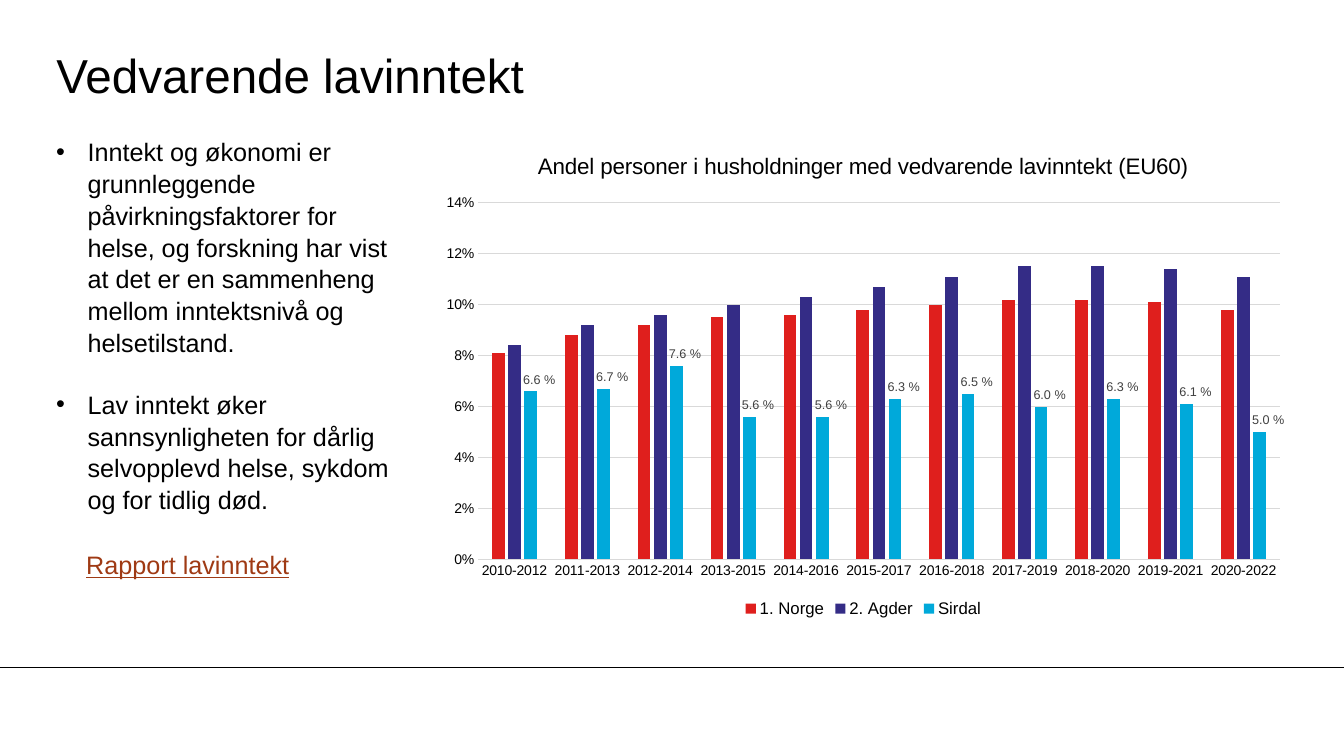
from lxml import etree
from pptx import Presentation
from pptx.chart.data import CategoryChartData
from pptx.dml.color import RGBColor
from pptx.enum.chart import XL_CHART_TYPE, XL_LABEL_POSITION, XL_LEGEND_POSITION, XL_TICK_MARK
from pptx.enum.shapes import MSO_CONNECTOR
from pptx.enum.text import MSO_ANCHOR
from pptx.oxml import parse_xml
from pptx.oxml.ns import nsdecls, qn
from pptx.util import Pt

TITLE = "Vedvarende lavinntekt"
BULLETS = [
    "Inntekt og økonomi er grunnleggende påvirkningsfaktorer for helse, og forskning har vist "
    "at det er en sammenheng mellom inntektsnivå og helsetilstand.",
    "Lav inntekt øker sannsynligheten for dårlig selvopplevd helse, sykdom og for tidlig død.",
]
REPORT = "Rapport lavinntekt"
CHART_TITLE = "Andel personer i husholdninger med vedvarende lavinntekt (EU60)"
PERIODS = [f"{year}-{year + 2}" for year in range(2010, 2021)]
SERIES = [
    ("1. Norge", "red", [8.1, 8.8, 9.2, 9.5, 9.6, 9.8, 10, 10.2, 10.2, 10.1, 9.8]),
    ("2. Agder", "navy", [8.4, 9.2, 9.6, 10, 10.3, 10.7, 11.1, 11.5, 11.5, 11.4, 11.1]),
    ("Sirdal", "cyan", [6.6, 6.7, 7.6, 5.6, 5.6, 6.3, 6.5, 6, 6.3, 6.1, 5]),
]
COLORS = {"text": "000000", "link": "9F3A14", "label": "404040", "grid": "D9D9D9",
          "red": "DF1F1D", "navy": "342C86", "cyan": "00A9DA"}
LABEL_FORMAT = r"0.0\ %"
PLOT_AREA = {"x": 0.056, "y": 0.143, "w": 0.924, "h": 0.73}
LABEL_SHIFT = {"x": 0.01, "y": 0}


def rgb(name):
    return RGBColor.from_string(COLORS[name])


def style(font, size, color="text"):
    font.name, font.size, font.bold = "Arial", Pt(size), False
    font.color.rgb = rgb(color)


def add_text(s, box, paragraphs, size=18, color="text", inset=(7.2, 3.6), anchor=MSO_ANCHOR.TOP,
             bullet=False, underline=False, spacing=1.0, gap=0):
    tf = s.shapes.add_textbox(*map(Pt, box)).text_frame
    tf.word_wrap, tf.vertical_anchor = True, anchor
    tf.margin_left = tf.margin_right = Pt(inset[0])
    tf.margin_top = tf.margin_bottom = Pt(inset[1])
    for i, text in enumerate(paragraphs):
        p = tf.paragraphs[0] if i == 0 else tf.add_paragraph()
        p.line_spacing, p.space_before = spacing, Pt(gap if i else 0)
        if bullet:
            pPr = p._p.get_or_add_pPr()
            pPr.set("marL", str(Pt(22.5)))
            pPr.set("indent", str(-Pt(22.5)))
            etree.SubElement(pPr, qn("a:buFont"), typeface="Arial")
            etree.SubElement(pPr, qn("a:buChar"), char="•")
        r = p.add_run()
        r.text = text
        style(r.font, size, color)
        r.font.underline = underline


def manual_layout(values, inner=False):
    target = '<c:layoutTarget val="inner"/>' if inner else ""
    modes = '<c:xMode val="edge"/><c:yMode val="edge"/>' if inner else ""
    parts = "".join(f'<c:{key} val="{value}"/>' for key, value in values.items())
    return parse_xml(f'<c:layout {nsdecls("c")}><c:manualLayout>{target}{modes}{parts}'
                     "</c:manualLayout></c:layout>")


def add_income_chart(s, box):
    data = CategoryChartData(number_format="0%")
    data.categories = PERIODS
    for name, _, percents in SERIES:
        data.add_series(name, [round(v / 100, 3) for v in percents])
    chart = s.shapes.add_chart(XL_CHART_TYPE.COLUMN_CLUSTERED, *map(Pt, box), data).chart
    style(chart.font, 10)
    chart.has_title = True
    p = chart.chart_title.text_frame.paragraphs[0]
    r = p.add_run()
    r.text = CHART_TITLE
    style(r.font, 16)
    chart.has_legend = True
    chart.legend.position = XL_LEGEND_POSITION.BOTTOM
    chart.legend.include_in_layout = False
    style(chart.legend.font, 12)

    periods, shares = chart.category_axis, chart.value_axis
    for axis in (periods, shares):
        axis.major_tick_mark = axis.minor_tick_mark = XL_TICK_MARK.NONE
        style(axis.tick_labels.font, 10)
    shares.minimum_scale, shares.maximum_scale, shares.major_unit = 0, 0.14, 0.02
    shares.tick_labels.number_format = "0%"
    shares.tick_labels.number_format_is_linked = False
    shares.format.line.fill.background()
    for line in (periods.format.line, shares.major_gridlines.format.line):
        line.color.rgb, line.width = rgb("grid"), Pt(0.75)

    plot = chart.plots[0]
    plot.gap_width, plot.overlap, plot.vary_by_categories = 219, -27, False
    for series, (_, color, _) in zip(plot.series, SERIES):
        series.format.fill.solid()
        series.format.fill.fore_color.rgb = rgb(color)
    add_value_labels(chart, plot.series[-1])

    area = chart.element.find(".//" + qn("c:plotArea"))
    for old in area.findall(qn("c:layout")):
        area.remove(old)
    area.insert(0, manual_layout(PLOT_AREA, inner=True))


def add_value_labels(chart, series):
    labels = series.data_labels
    labels.show_value = True
    labels.number_format, labels.number_format_is_linked = LABEL_FORMAT, False
    labels.position = XL_LABEL_POSITION.OUTSIDE_END
    style(labels.font, 9, "label")
    for i in range(len(PERIODS)):
        label = series.points[i].data_label
        label.position = XL_LABEL_POSITION.OUTSIDE_END
        style(label.font, 9, "label")
    for dLbl in chart.element.iter(qn("c:dLbl")):
        fmt = etree.Element(qn("c:numFmt"), formatCode=LABEL_FORMAT, sourceLinked="0")
        dLbl.insert(1, manual_layout(LABEL_SHIFT))
        dLbl.insert(2, fmt)


def main():
    """Build the slide on persistent low income."""
    prs = Presentation()
    prs.slide_width, prs.slide_height = Pt(960), Pt(540)
    s = prs.slides.add_slide(prs.slide_layouts[6])
    rule = s.shapes.add_connector(MSO_CONNECTOR.STRAIGHT, 0, Pt(476.6), Pt(960), Pt(476.6))
    rule.line.color.rgb, rule.line.width = rgb("text"), Pt(0.75)
    etree.SubElement(rule._element.spPr, qn("a:effectLst"))
    add_text(s, (40.3, 26, 799, 54), [TITLE], size=34, inset=(0, 0), anchor=MSO_ANCHOR.MIDDLE)
    add_text(s, (33, 93, 252, 269), BULLETS, bullet=True, spacing=1.05, gap=21.6)
    add_text(s, (54.5, 389, 191, 29), [REPORT], color="link", underline=True)
    add_income_chart(s, (306.7, 95, 620, 349))
    prs.save("out.pptx")


if __name__ == "__main__":
    main()
